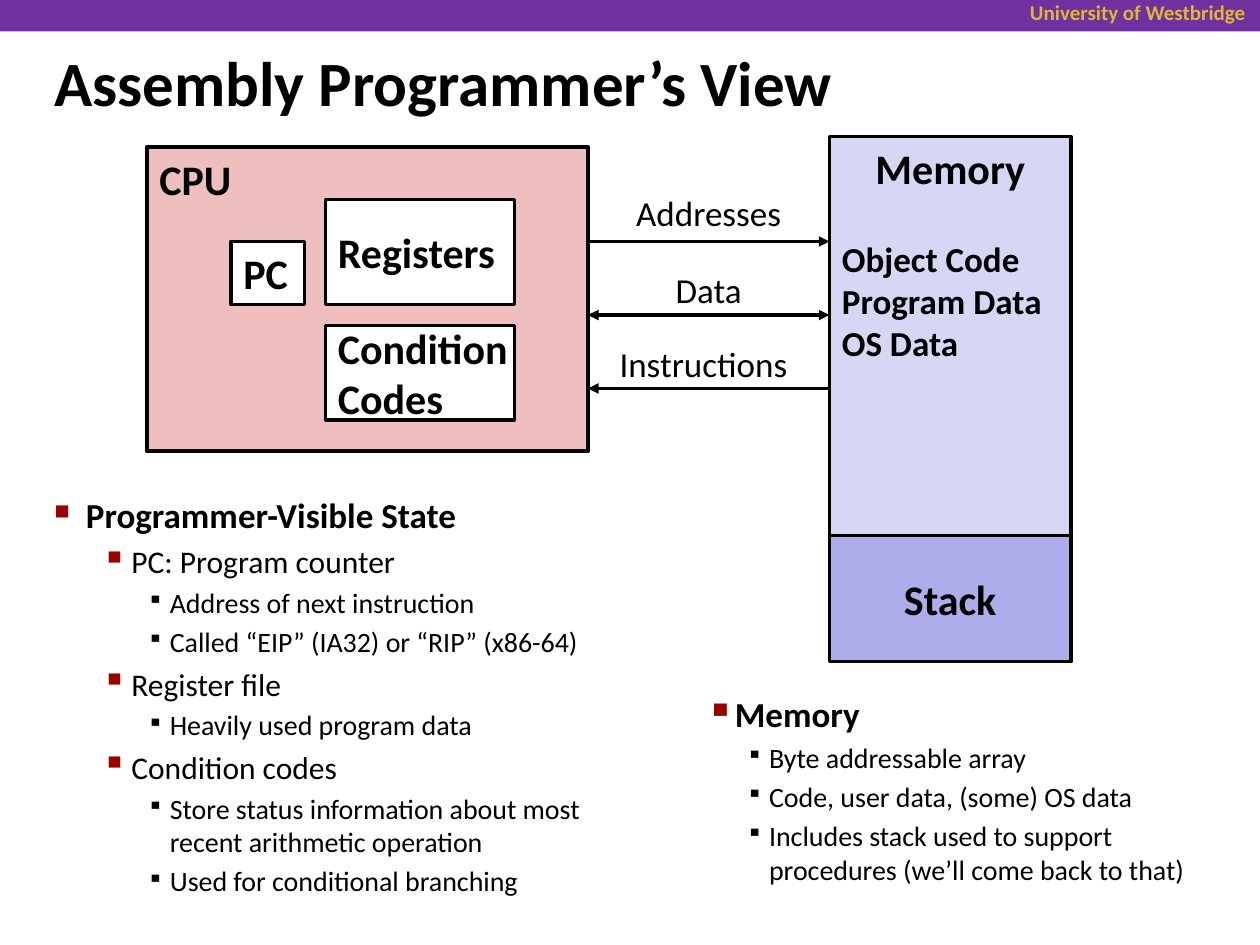
from dataclasses import dataclass

from lxml import etree
from pptx import Presentation
from pptx.dml.color import RGBColor
from pptx.enum.shapes import MSO_CONNECTOR, MSO_SHAPE
from pptx.enum.text import MSO_ANCHOR, PP_ALIGN
from pptx.oxml.ns import qn
from pptx.slide import Slide
from pptx.util import Pt

STRAIGHT = MSO_CONNECTOR.STRAIGHT
RECTANGLE = MSO_SHAPE.RECTANGLE
TOP, MIDDLE = MSO_ANCHOR.TOP, MSO_ANCHOR.MIDDLE
LEFT, CENTER, RIGHT = PP_ALIGN.LEFT, PP_ALIGN.CENTER, PP_ALIGN.RIGHT

BLACK = RGBColor(0x00, 0x00, 0x00)
WHITE = RGBColor(0xFF, 0xFF, 0xFF)
PURPLE = RGBColor(0x70, 0x30, 0xA0)
GOLD = RGBColor(0xDC, 0xB8, 0x34)
PINK = RGBColor(0xEF, 0xBF, 0xBF)
LAVENDER = RGBColor(0xD6, 0xD6, 0xF5)
VIOLET = RGBColor(0xAD, 0xAD, 0xEB)
DARK_RED = RGBColor(0x99, 0x00, 0x00)

STATE_LEVELS = {
    "heading": (18, -18, "■", DARK_RED, 60, 20, True),
    "topic": (44, -17, "▪", DARK_RED, 110, 18, False),
    "detail": (66, -13, "▪", BLACK, 80, 16, False),
}
MEMORY_LEVELS = {
    "heading": (23, -14, "▪", DARK_RED, 110, 20, True),
    "detail": (45, -13, "▪", BLACK, 80, 16, False),
}
STATE_ITEMS = [
    ("heading", "Programmer-Visible State"),
    ("topic", "PC: Program counter"),
    ("detail", "Address of next instruction"),
    ("detail", "Called “EIP” (IA32) or “RIP” (x86-64)"),
    ("topic", "Register file"),
    ("detail", "Heavily used program data"),
    ("topic", "Condition codes"),
    ("detail", "Store status information about most recent arithmetic operation"),
    ("detail", "Used for conditional branching"),
]
MEMORY_ITEMS = [
    ("heading", "Memory"),
    ("detail", "Byte addressable array"),
    ("detail", "Code, user data, (some) OS data"),
    ("detail", "Includes stack used to support procedures (we’ll come back to that)"),
]


def set_values(target, values):
    for name, value in values.items():
        setattr(target, name, value)


@dataclass
class Diagram:
    """Draws styled elements on the current slide."""

    slide: Slide
    font: str = "Calibri"

    def fill_text(self, shape, lines, size, bold=False, color=BLACK,
                  align=LEFT, anchor=TOP, right_margin=7.2):
        frame = shape.text_frame
        set_values(frame, {"word_wrap": True, "vertical_anchor": anchor,
                           "margin_right": Pt(right_margin)})
        frame.text = "\n".join(lines)
        for paragraph in frame.paragraphs:
            paragraph.alignment = align
            self.style(paragraph, size, bold, color)

    def style(self, paragraph, size, bold, color=BLACK):
        for run in paragraph.runs:
            set_values(run.font, {"name": self.font, "size": Pt(size), "bold": bold})
            run.font.color.rgb = color

    def box(self, bounds, fill, line_width=0):
        shape = self.slide.shapes.add_shape(RECTANGLE, *map(Pt, bounds))
        shape.shadow.inherit = False
        shape.fill.solid()
        shape.fill.fore_color.rgb = fill
        if line_width:
            shape.line.color.rgb = BLACK
            shape.line.width = Pt(line_width)
        else:
            shape.line.fill.background()
        return shape

    def text(self, bounds, lines, size, **values):
        shape = self.slide.shapes.add_textbox(*map(Pt, bounds))
        self.fill_text(shape, lines, size, **values)

    def arrow(self, start, end, y, ends):
        connector = self.slide.shapes.add_connector(
            STRAIGHT, Pt(start), Pt(y), Pt(end), Pt(y))
        connector.line.color.rgb = BLACK
        connector.line.width = Pt(2)
        properties = connector._element.spPr
        line = properties.find(qn("a:ln"))
        for name in ends:
            etree.SubElement(line, qn(f"a:{name}"), type="triangle")
        etree.SubElement(properties, qn("a:effectLst"))

    def bullets(self, bounds, items, levels):
        shape = self.slide.shapes.add_textbox(*map(Pt, bounds))
        frame = shape.text_frame
        frame.word_wrap = True
        frame.text = "\n".join(words for _, words in items)
        for paragraph, (level, _) in zip(frame.paragraphs, items):
            margin, indent, bullet, color, percent, size, bold = levels[level]
            paragraph.space_before = Pt(size * 0.2)
            self.style(paragraph, size, bold)
            properties = paragraph._p.get_or_add_pPr()
            properties.set("marL", str(Pt(margin)))
            properties.set("indent", str(Pt(indent)))
            bullet_color = etree.SubElement(properties, qn("a:buClr"))
            etree.SubElement(bullet_color, qn("a:srgbClr"), val=str(color))
            etree.SubElement(properties, qn("a:buSzPct"), val=str(percent * 1000))
            etree.SubElement(properties, qn("a:buChar"), char=bullet)


def main():
    presentation = Presentation()
    set_values(presentation, {"slide_width": Pt(720), "slide_height": Pt(540)})
    diagram = Diagram(presentation.slides.add_slide(presentation.slide_layouts[6]))

    diagram.box((0, 0, 720, 18), PURPLE)
    diagram.text((528, -3.6, 190.8, 21.6), ["University of Westbridge"], 12,
                 bold=True, color=GOLD, align=RIGHT)
    diagram.text((24, 24, 569, 45), ["Assembly Programmer’s View"], 36,
                 bold=True, anchor=MIDDLE)

    cpu_left, cpu_width = 84, 252
    cpu_right = cpu_left + cpu_width
    memory_left, memory_width = 474, 138
    gap = memory_left - cpu_right
    for bounds, fill, width, lines, align, anchor, margin in [
        ((cpu_left, 84, cpu_width, 174), PINK, 2.25, ["CPU"], LEFT, TOP, 7.2),
        ((132, 138, 42, 36), WHITE, 2, ["PC"], LEFT, MIDDLE, 0),
        ((186, 114, 108, 60), WHITE, 2, ["Registers"], LEFT, MIDDLE, 0),
        ((186, 186, 108, 54), WHITE, 2, ["Condition", "Codes"], LEFT, MIDDLE, 0),
        ((memory_left, 78, memory_width, 300), LAVENDER, 2, ["Memory"], CENTER, TOP, 7.2),
        ((memory_left, 306, memory_width, 72), VIOLET, 2, ["Stack"], CENTER, MIDDLE, 7.2),
    ]:
        shape = diagram.box(bounds, fill, width)
        diagram.fill_text(shape, lines, 24, bold=True, align=align, anchor=anchor,
                          right_margin=margin)
    diagram.text((memory_left, 132, 180, 80),
                 ["Object Code", "Program Data", "OS Data"], 20, bold=True)

    for label, y, label_top, label_width, ends in [
        ("Addresses", 138, 106, gap, ["tailEnd"]),
        ("Data", 180, 150, gap, ["headEnd", "tailEnd"]),
        ("Instructions", 222, 192, 132, ["headEnd"]),
    ]:
        diagram.arrow(cpu_right, memory_left, y, ends)
        diagram.text((cpu_right, label_top, label_width, 31), [label], 20, align=CENTER)

    diagram.bullets((24, 278.6, 343.4, 243), STATE_ITEMS, STATE_LEVELS)
    diagram.bullets((387.4, 392.4, 321, 124), MEMORY_ITEMS, MEMORY_LEVELS)
    presentation.save("out.pptx")


if __name__ == "__main__":
    main()
